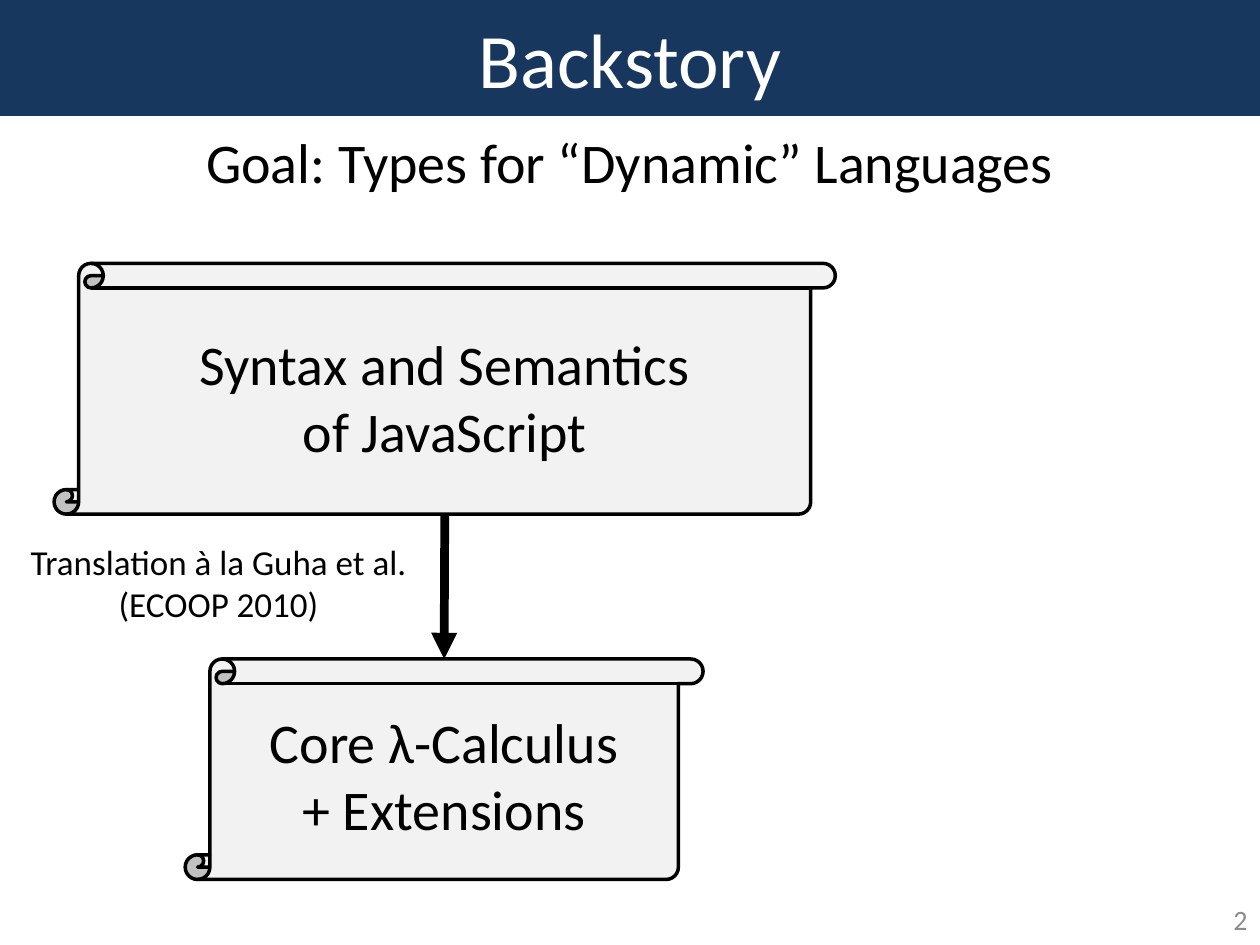
from lxml import etree
from pptx import Presentation
from pptx.dml.color import RGBColor
from pptx.enum import shapes, text
from pptx.oxml.ns import qn
from pptx.util import Inches, Pt

COLORS = {"navy": "17375E", "paper": "F2F2F2", "ink": "000000",
          "white": "FFFFFF", "gray": "8C8C8C"}
FONT = "Calibri"
ALIGN = text.PP_ALIGN

# left, top, width, height in inches
TITLE = ("Backstory", (0, 0, 10, 0.92))
GOAL = ("Goal: Types for “Dynamic” Languages", (0, 0.96, 10, 0.64))
PAGE_NUMBER = ("2", (7.67, 7.1, 2.33, 0.4))
ARROW_LABEL = ("Translation à la Guha et al.\v(ECOOP 2010)", (-0.02, 4.24, 3.51, 0.77))
# text, scroll place, roll size, top and height of the text
SCROLLS = [
    ("Syntax and Semantics\nof JavaScript", (0.43, 2.09, 6.2, 1.99), 0.098, (2.56, 1.18)),
    ("Core λ-Calculus\n+ Extensions", (1.47, 5.23, 4.11, 1.75), 0.112, (5.56, 1.18)),
]


def color(name):
    return RGBColor.from_string(COLORS[name])


def add_shape(page, kind, place, fill, line=None):
    shape = page.shapes.add_shape(kind, *map(Inches, place))
    shape.shadow.inherit = False
    shape.fill.solid()
    shape.fill.fore_color.rgb = color(fill)
    if line:
        shape.line.color.rgb = color(line)
        shape.line.width = Pt(2)
    else:
        shape.line.fill.background()
    return shape


def write(shape, words, size=32, ink="ink", align=ALIGN.CENTER):
    """Fill a shape with text: \\n starts a paragraph, \\v breaks a line."""
    frame = shape.text_frame
    frame.word_wrap = True
    frame.vertical_anchor = text.MSO_ANCHOR.MIDDLE
    frame.text = words
    for para in frame.paragraphs:
        para.alignment = align
        for span in para.runs:
            span.font.name = FONT
            span.font.size = Pt(size)
            span.font.color.rgb = color(ink)


def add_text(page, words, place, **format):
    write(page.shapes.add_textbox(*map(Inches, place)), words, **format)


def add_scroll(page, words, place, roll, text_span):
    scroll = add_shape(page, shapes.MSO_SHAPE.VERTICAL_SCROLL, place, "paper", "ink")
    scroll.adjustments[0] = roll
    left, _, width, _ = place
    top, height = text_span
    add_text(page, words, (left, top, width, height))
    return scroll


def add_arrow(page, upper, lower):
    arrow = page.shapes.add_connector(shapes.MSO_CONNECTOR.STRAIGHT, 0, 0, 0, 0)
    arrow.begin_connect(upper, 2)
    arrow.end_connect(lower, 0)
    arrow.line.color.rgb = color("ink")
    arrow.line.width = Pt(5)
    etree.SubElement(arrow.line._get_or_add_ln(), qn("a:tailEnd"), type="triangle")
    etree.SubElement(arrow._element.spPr, qn("a:effectLst"))


def main():
    deck = Presentation()
    deck.slide_width, deck.slide_height = Inches(10), Inches(7.5)
    page = deck.slides.add_slide(deck.slide_layouts[6])

    title, place = TITLE
    banner = add_shape(page, shapes.MSO_SHAPE.RECTANGLE, place, "navy")
    write(banner, title, size=44, ink="white")
    add_text(page, *PAGE_NUMBER, size=16, ink="gray", align=ALIGN.RIGHT)
    add_text(page, *GOAL)

    source, core = [add_scroll(page, *scroll) for scroll in SCROLLS]
    add_arrow(page, source, core)
    add_text(page, *ARROW_LABEL, size=20)

    deck.save("out.pptx")


if __name__ == "__main__":
    main()
